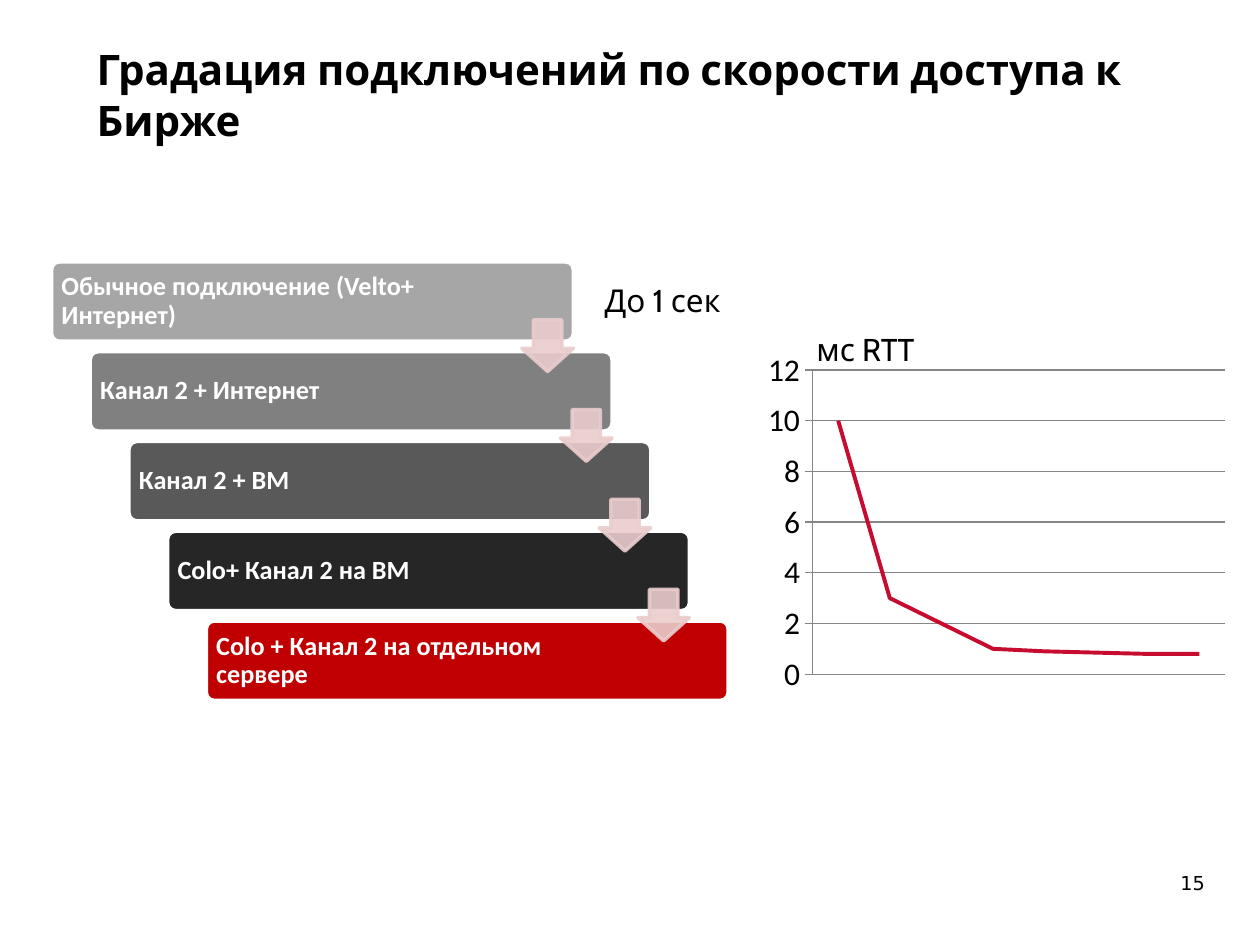
from lxml import etree
from pptx import Presentation
from pptx.chart.data import CategoryChartData
from pptx.dml.color import RGBColor
from pptx.enum.chart import XL_CHART_TYPE, XL_MARKER_STYLE, XL_TICK_MARK
from pptx.enum.shapes import MSO_SHAPE
from pptx.enum.text import MSO_ANCHOR, PP_ALIGN
from pptx.oxml.ns import qn
from pptx.util import Cm, Pt

ROUND_RECT = MSO_SHAPE.ROUNDED_RECTANGLE
DOWN_ARROW = MSO_SHAPE.DOWN_ARROW
LINE_STACKED = XL_CHART_TYPE.LINE_STACKED
NO_MARKER = XL_MARKER_STYLE.NONE
TICK_OUT, TICK_NONE = XL_TICK_MARK.OUTSIDE, XL_TICK_MARK.NONE
MIDDLE, TOP = MSO_ANCHOR.MIDDLE, MSO_ANCHOR.TOP
LEFT, RIGHT = PP_ALIGN.LEFT, PP_ALIGN.RIGHT

COLORS = {
    "text": "000000",
    "white": "FFFFFF",
    "arrow": "EACCCD",
    "line": "C60C30",
    "grid": "868686",
}
TITLE = "Градация подключений по скорости доступа к Бирже"
STEPS = [
    ("Обычное подключение (Velto+ Интернет)", "A6A6A6"),
    ("Канал 2 + Интернет", "808080"),
    ("Канал 2 + ВМ", "595959"),
    ("Colo+ Канал 2 на ВМ", "262626"),
    ("Colo + Канал 2 на отдельном cервере", "C00000"),
]
LABELS = [
    ("До 1 сек", 11.94, 5.54, 3.0),
    ("мс RTT", 16.21, 6.53, 2.51),
]
CATEGORIES = ["1", "2", "3", "4", "5"]
RTT = [10, 3, 2, 1, 0.9, 0.85, 0.8, 0.8]
PAGE = "15"

STEP_X, STEP_Y = 0.78, 1.81
BAR_X, BAR_Y, BAR_W, BAR_H = 1.04, 5.28, 10.52, 1.6
ARROW_X, ARROW_Y, ARROW_SIZE = 10.52, 6.45, 1.04


def rgb(color):
    return RGBColor.from_string(color)


def add_text(s, text, x, y, w, h, size, font="Cabin", color=COLORS["text"],
             bold=False, align=LEFT, anchor=TOP, spacing=None, insets=None, wrap=True):
    tf = s.shapes.add_textbox(Cm(x), Cm(y), Cm(w), Cm(h)).text_frame
    tf.word_wrap = wrap
    tf.vertical_anchor = anchor
    if insets:
        side, edge = insets
        tf.margin_left = tf.margin_right = Cm(side)
        tf.margin_top = tf.margin_bottom = Cm(edge)
    p = tf.paragraphs[0]
    p.alignment = align
    p.line_spacing = spacing
    r = p.add_run()
    r.text = text
    r.font.name = font
    r.font.size = Pt(size)
    r.font.bold = bold
    r.font.color.rgb = rgb(color)


def add_box(s, kind, x, y, w, h, fill, line, adjustments):
    sp = s.shapes.add_shape(kind, Cm(x), Cm(y), Cm(w), Cm(h))
    sp.shadow.inherit = False
    sp.fill.solid()
    sp.fill.fore_color.rgb = rgb(fill)
    sp.line.color.rgb = rgb(line)
    sp.line.width = Pt(2)
    for i, value in enumerate(adjustments):
        sp.adjustments[i] = value
    return sp


def set_alpha(sp, percent):
    for color in sp._element.spPr.iter(qn("a:srgbClr")):
        etree.SubElement(color, qn("a:alpha")).set("val", str(percent * 1000))


def add_staircase(s):
    for i, (text, fill) in enumerate(STEPS):
        x, y = BAR_X + i * STEP_X, BAR_Y + i * STEP_Y
        add_box(s, ROUND_RECT, x, y, BAR_W, BAR_H, fill, COLORS["white"], [0.1])
        add_text(s, text, x + 0.05, y + 0.05, 8.61, BAR_H - 0.1, 15, "Calibri",
                 COLORS["white"], bold=True, anchor=MIDDLE, spacing=0.9,
                 insets=(0.15, 0.15))
    for i in range(len(STEPS) - 1):
        sp = add_box(s, DOWN_ARROW, ARROW_X + i * STEP_X, ARROW_Y + i * STEP_Y,
                     ARROW_SIZE, ARROW_SIZE, COLORS["arrow"], COLORS["arrow"],
                     [0.55, 0.45])
        set_alpha(sp, 90)


def add_rtt_chart(s):
    data = CategoryChartData()
    data.categories = CATEGORIES
    data.add_series("Series 1", RTT)
    chart = s.shapes.add_chart(LINE_STACKED, Cm(15.29), Cm(6.93), Cm(9.6), Cm(7.19),
                               data).chart
    chart.has_legend = False
    chart.has_title = False
    chart.font.name = "Calibri"
    chart.font.size = Pt(18)
    chart.font.color.rgb = rgb(COLORS["text"])
    chart.category_axis.visible = False
    axis = chart.value_axis
    axis.minimum_scale, axis.maximum_scale, axis.major_unit = 0, 12, 2
    axis.major_tick_mark, axis.minor_tick_mark = TICK_OUT, TICK_NONE
    axis.has_major_gridlines = True
    for line in (axis.format.line, axis.major_gridlines.format.line):
        line.color.rgb = rgb(COLORS["grid"])
        line.width = Pt(0.75)
    plot = chart.plots[0]
    plot.vary_by_categories = False
    series = plot.series[0]
    series.smooth = False
    series.format.line.color.rgb = rgb(COLORS["line"])
    series.format.line.width = Pt(2.25)
    series.marker.style = NO_MARKER


def main():
    prs = Presentation()
    prs.slide_width, prs.slide_height = Cm(25.4), Cm(19.05)
    s = prs.slides.add_slide(prs.slide_layouts[6])
    add_text(s, PAGE, 23.29, 17.2, 1, 1, 11, "DejaVu Sans", align=RIGHT,
             spacing=1.5, insets=(0, 0.13))
    add_text(s, TITLE, 1.7, 0.76, 22.4, 2.31, 24, bold=True)
    add_staircase(s)
    add_rtt_chart(s)
    for text, x, y, w in LABELS:
        add_text(s, text, x, y, w, 1.02, 18, wrap=False)
    prs.save("out.pptx")


if __name__ == "__main__":
    main()
